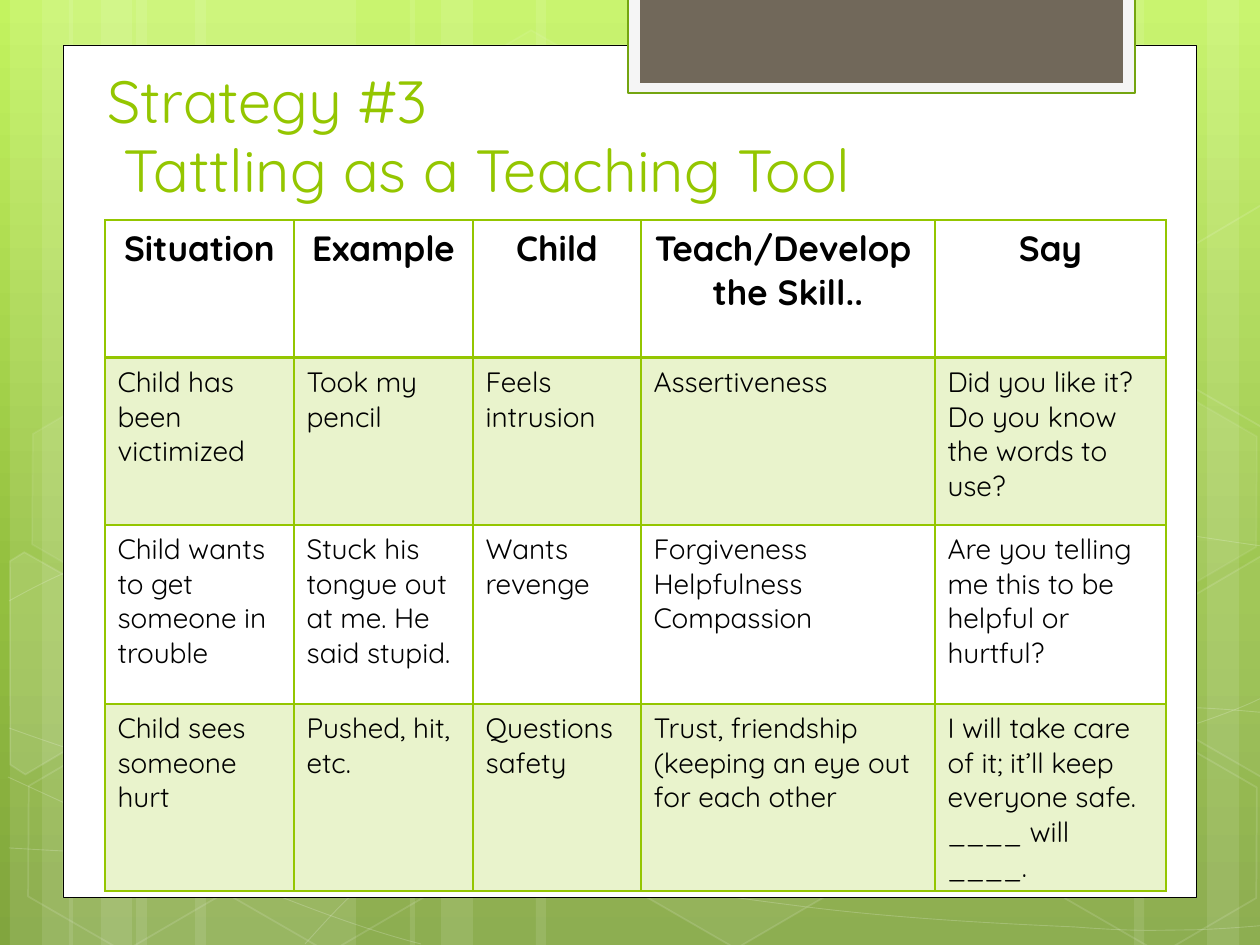
from copy import deepcopy
from itertools import product
from math import cos, radians, sin

from lxml import etree
from pptx import Presentation
from pptx import util as u
from pptx.dml.color import RGBColor
from pptx.enum import shapes, text
from pptx.oxml.ns import qn

PX = 914400 / 126
FONT = "Quicksand"
TILT = 30
WHITE = RGBColor(0xFF, 0xFF, 0xFF)
BLACK = RGBColor(0, 0, 0)
LIME = RGBColor(0x94, 0xC6, 0x00)
GREEN = RGBColor(0x74, 0xA5, 0x10)
PALE = RGBColor(0xF5, 0xF5, 0xF5)
BROWN = RGBColor(0x71, 0x68, 0x5A)
SKY = [
    (0, RGBColor(0xC3, 0xF3, 0x5F)),
    (0.62, RGBColor(0x93, 0xBF, 0x3F)),
    (1, RGBColor(0x81, 0xA5, 0x3E)),
]

TITLE = "Strategy #3\v Tattling as a Teaching Tool"
TABLE = [
    ["Situation", "Example", "Child", "Teach/Develop  the Skill..", "Say"],
    ["Child has been victimized", "Took my pencil", "Feels intrusion", "Assertiveness",
     "Did you like it? Do you know the words to use?"],
    ["Child wants to get someone in trouble", "Stuck his tongue out at me. He said stupid.",
     "Wants\nrevenge", "Forgiveness\nHelpfulness\nCompassion",
     "Are you telling me this to be helpful or hurtful?"],
    ["Child sees someone hurt", "Pushed, hit, etc.", "Questions safety",
     "Trust, friendship (keeping an eye out for each other",
     "I will take care of it; it’ll keep everyone safe.\n____ will ____."],
]
COLS = [189, 179, 168, 294, 231]
ROWS = [138, 167, 179, 187]

BANDS = [
    (136, 220, 0), (10, 63, 0), (42, 105, 0), (195, 220, 0), (69, 63, 0), (101, 105, 0),
    (924, 220, 180), (1207, 63, 180), (1134, 105, 180),
    (536, 388, 0), (410, 63, 0), (441, 105, 0),
]
CURVES = [
    [(9, 848), (77, 852), (145, 856), (239, 854), (334, 853), (451, 851), (577, 838),
     (703, 825), (882, 801), (998, 777), (1113, 753), (1231, 716), (1269, 694)],
    [(9, 601), (45, 581), (82, 562), (152, 543), (224, 524), (326, 496), (437, 488),
     (549, 479), (685, 478), (824, 488), (963, 498), (1193, 537), (1269, 547)],
    [(8, 777), (160, 847), (311, 916), (421, 944)],
    [(9, 728), (48, 742), (88, 756), (161, 776), (234, 795), (344, 827), (450, 848),
     (554, 869), (687, 892), (791, 905), (896, 919), (1008, 924), (1075, 927),
     (1140, 932), (1158, 930), (1191, 930), (1223, 929), (1246, 927), (1269, 925)],
    [(305, 944), (328, 919), (350, 893), (381, 871), (411, 848), (454, 823), (489, 805),
     (524, 788), (546, 780), (592, 767), (638, 755), (722, 737), (766, 728),
     (811, 719), (818, 719), (857, 717), (896, 713), (958, 709), (1000, 708),
     (1045, 707), (1116, 708), (1116, 708), (1144, 708), (1173, 708), (1201, 708),
     (1223, 709), (1245, 711), (1256, 712), (1268, 713), (1264, 712), (1268, 713)],
]
HEXAGONS = [
    (421, 45, 4, 8), (626, 742, 6, 12), (14, 745, 0, 12), (18, 393, 7, 8),
    (219, 746, 0, 12), (949, 571, 10, 12), (1051, 747, 0, 12), (1051, 396, 7, 8),
]
CUT_HEXAGONS = [
    ((45, 674), [(10, 561), (24, 552), (121, 607), (120, 718), (25, 774), (10, 765)], 10),
    ((1241, 655),
     [(1167, 611), (1261, 556), (1271, 562), (1271, 772), (1263, 777), (1167, 722)], 4),
    ((1241, 304),
     [(1167, 261), (1261, 205), (1273, 212), (1271, 422), (1263, 427), (1167, 372)], 0),
]
PANELS = [
    ((63, 45, 1134, 853), WHITE, BLACK, 0.5),
    ((628, -3, 507, 96), PALE, GREEN, 1.25),
    ((640, -3, 483, 86), BROWN, None, 0),
]


def px(*values):
    return [u.Emu(round(v * PX)) for v in values]


def paint(fill, color, alpha=100):
    if color is None or alpha == 0:
        fill.background()
        return
    fill.solid()
    fill.fore_color.rgb = color


def fade(element, alpha):
    for color in element.iter(qn("a:srgbClr")):
        etree.SubElement(color, qn("a:alpha"), val=str(alpha * 1000))


def style(sp, fill=None, alpha=100, line=None, width=0, line_alpha=100):
    sp.shadow.inherit = False
    paint(sp.fill, fill, alpha)
    if 0 < alpha < 100:
        fade(sp.element.spPr, alpha)
    paint(sp.line.fill, line)
    if line is not None:
        sp.line.width = u.Pt(width)
        if line_alpha < 100:
            fade(sp.element.spPr.find(qn("a:ln")), line_alpha)


def outline(s, points, close):
    builder = s.shapes.build_freeform(*points[0], scale=PX)
    builder.add_line_segments(points[1:], close=close)
    return builder.convert_to_shape()


def curve(s, nodes):
    sp = outline(s, nodes, False)
    segments = list(sp.element.iter(qn("a:lnTo")))
    for i in range(0, len(segments), 3):
        bezier = etree.Element(qn("a:cubicBezTo"))
        segments[i].addprevious(bezier)
        for segment in segments[i:i + 3]:
            bezier.append(segment[0])
            segment.getparent().remove(segment)
    return sp


def turn(points, pivot, degrees):
    (cx, cy), c, d = pivot, cos(radians(degrees)), sin(radians(degrees))
    return [(cx + (x - cx) * c - (y - cy) * d, cy + (x - cx) * d + (y - cy) * c)
            for x, y in points]


def write(tf, content, size, color=BLACK, bold=False, align=text.PP_ALIGN.LEFT, spacing=1.0):
    tf.word_wrap = True
    tf.text = content
    for p in tf.paragraphs:
        p.alignment = align
        p.line_spacing = spacing
        for r in p.runs:
            r.font.name = FONT
            r.font.size = u.Pt(size)
            r.font.bold = bold
            r.font.color.rgb = color


def border(cell, **widths):
    tc_pr = cell._tc.get_or_add_tcPr()
    for side, width in widths.items():
        ln = etree.SubElement(tc_pr, qn(f"a:ln{side}"), w=str(u.Pt(width)))
        solid = etree.SubElement(ln, qn("a:solidFill"))
        etree.SubElement(solid, qn("a:srgbClr"), val=str(LIME))


def add_background(s):
    fill = s.background.fill
    fill.gradient()
    fill.gradient_angle = 270
    stops = s.element.find(".//" + qn("a:gsLst"))
    stops.append(deepcopy(stops[-1]))
    for stop, (position, color) in zip(fill.gradient_stops, SKY):
        stop.position = position
        stop.color.rgb = color
    for left, width, rotation in BANDS:
        sp = s.shapes.add_shape(shapes.MSO_SHAPE.RECTANGLE, *px(left, 0, width, 945))
        sp.rotation = rotation
        style(sp, WHITE, 10)
    for nodes in CURVES:
        style(curve(s, nodes), line=WHITE, width=0.5, line_alpha=20)
    for left, top, alpha, line_alpha in HEXAGONS:
        sp = s.shapes.add_shape(shapes.MSO_SHAPE.HEXAGON, *px(left, top, 220, 192))
        sp.rotation = TILT
        sp.adjustments[0] = 0.285
        style(sp, WHITE, alpha, WHITE, 1, line_alpha)
    for pivot, points, alpha in CUT_HEXAGONS:
        sp = outline(s, turn(points, pivot, -TILT), True)
        sp.rotation = TILT
        style(sp, WHITE, alpha, WHITE, 1, 12)
    for box, color, line, width in PANELS:
        sp = s.shapes.add_shape(shapes.MSO_SHAPE.RECTANGLE, *px(*box))
        style(sp, color, line=line, width=width)


def add_title(s):
    tf = s.shapes.add_textbox(*px(95, 42, 1081, 242)).text_frame
    tf.vertical_anchor = text.MSO_ANCHOR.BOTTOM
    tf.margin_bottom = px(77)[0]
    write(tf, TITLE, 34, LIME, spacing=0.98)


def add_strategy_table(s):
    frame = s.shapes.add_table(len(ROWS), len(COLS), *px(105, 220, sum(COLS), sum(ROWS)))
    table = frame.table
    table.first_row = table.horz_banding = False
    for column, width in zip(table.columns, px(*COLS)):
        column.width = width
    for row, height in zip(table.rows, px(*ROWS)):
        row.height = height
    for i, j in product(range(len(ROWS)), range(len(COLS))):
        cell = table.cell(i, j)
        header = i == 0
        write(cell.text_frame, TABLE[i][j], 20 if header else 16, bold=header,
              align=text.PP_ALIGN.CENTER if header else text.PP_ALIGN.LEFT)
        border(cell, L=1, R=1, T=2 if i == 1 else 1, B=2 if header else 1)
        paint(cell.fill, LIME if i % 2 else None)
        if i % 2:
            fade(cell._tc.tcPr.find(qn("a:solidFill")), 20)


def main():
    prs = Presentation()
    prs.slide_width, prs.slide_height = px(1260, 945)
    s = prs.slides.add_slide(prs.slide_layouts[6])
    add_background(s)
    add_title(s)
    add_strategy_table(s)
    prs.save("out.pptx")


if __name__ == "__main__":
    main()
